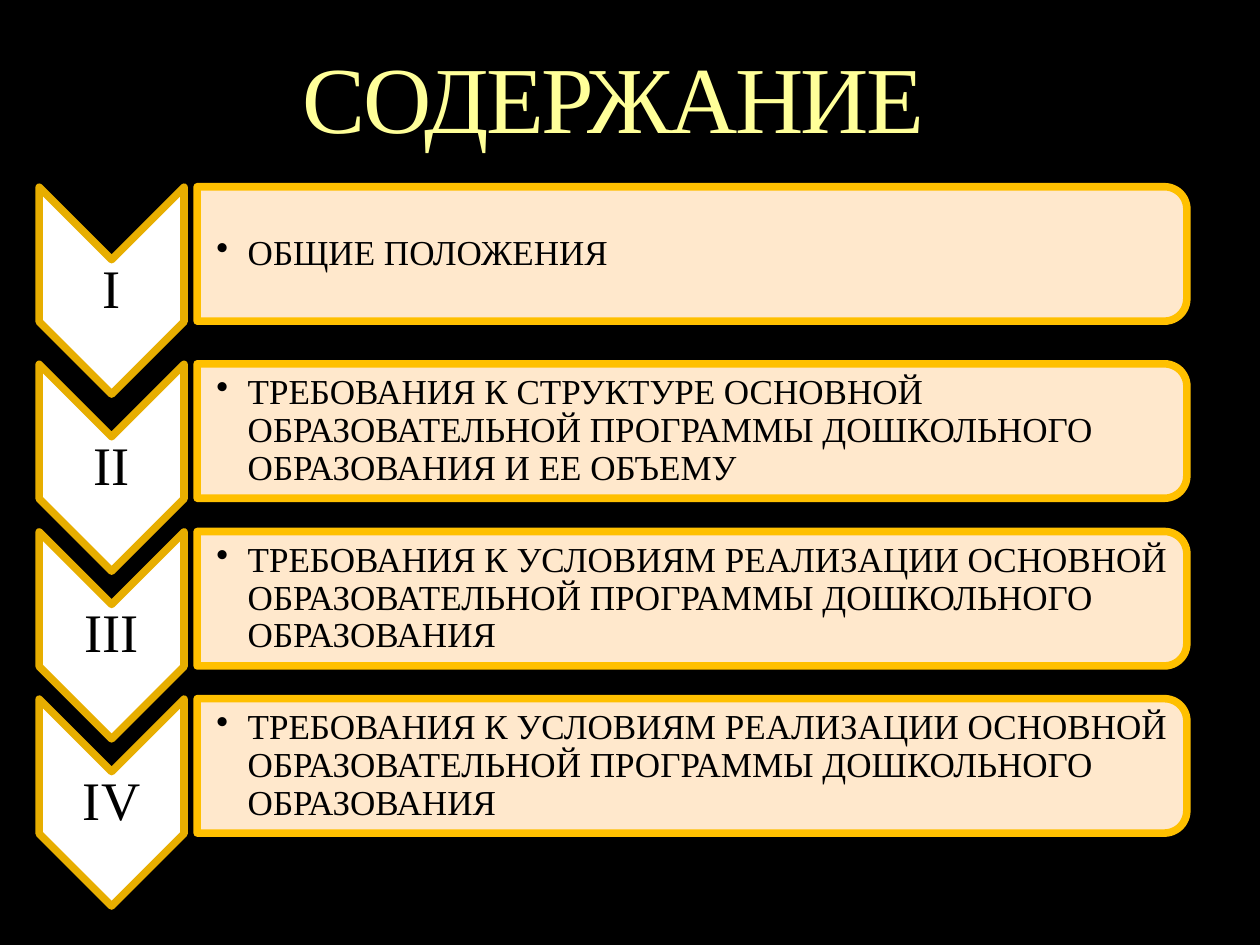
from dataclasses import dataclass

from lxml.etree import SubElement
from pptx import Presentation
from pptx.dml.color import RGBColor
from pptx.enum.shapes import MSO_SHAPE as Preset
from pptx.enum.text import MSO_ANCHOR as Anchor, MSO_AUTO_SIZE as AutoSize, PP_ALIGN as Align
from pptx.oxml.ns import qn
from pptx.util import Cm, Pt

FONT = "Times New Roman"
BLACK, WHITE, YELLOW = "000000", "FFFFFF", "FFFF99"
PEACH, GOLD, DARK_GOLD = "FFE8CC", "FFC000", "E7AE00"
CHEVRON_CENTER, CHEVRON_DROP = 2.25, 0.74
PANEL_CENTER = 13.95


@dataclass(frozen=True)
class Section:
    numeral: str
    heading: str
    center: float


SECTIONS = [
    Section("I", "ОБЩИЕ ПОЛОЖЕНИЯ", 5.12),
    Section("II", "ТРЕБОВАНИЯ К СТРУКТУРЕ ОСНОВНОЙ ОБРАЗОВАТЕЛЬНОЙ "
            "ПРОГРАММЫ ДОШКОЛЬНОГО ОБРАЗОВАНИЯ И ЕЕ ОБЪЕМУ", 8.69),
    Section("III", "ТРЕБОВАНИЯ К УСЛОВИЯМ РЕАЛИЗАЦИИ ОСНОВНОЙ "
            "ОБРАЗОВАТЕЛЬНОЙ ПРОГРАММЫ ДОШКОЛЬНОГО ОБРАЗОВАНИЯ", 12.07),
    Section("IV", "ТРЕБОВАНИЯ К УСЛОВИЯМ РЕАЛИЗАЦИИ ОСНОВНОЙ "
            "ОБРАЗОВАТЕЛЬНОЙ ПРОГРАММЫ ДОШКОЛЬНОГО ОБРАЗОВАНИЯ", 15.44),
]


def color(value: str) -> RGBColor:
    return RGBColor.from_string(value)


def centered(x: float, y: float, width: float, height: float) -> tuple:
    return Cm(x - width / 2), Cm(y - height / 2), Cm(width), Cm(height)


def write(shape, text: str, *, size: float, fill: str = BLACK, align=Align.CENTER,
          insets: tuple = (0, 0, 0, 0), bullet: bool = False, spacing: int = 0) -> None:
    frame = shape.text_frame
    frame.word_wrap = True
    frame.auto_size = AutoSize.NONE
    frame.vertical_anchor = Anchor.MIDDLE
    (frame.margin_left, frame.margin_top,
     frame.margin_right, frame.margin_bottom) = map(Cm, insets)
    paragraph = frame.paragraphs[0]
    paragraph.alignment = align
    paragraph.line_spacing = 0.9
    paragraph.space_before = Pt(0)
    if bullet:
        paragraph.level = 1
        properties = paragraph._p.get_or_add_pPr()
        properties.set("marL", str(Cm(0.63)))
        properties.set("indent", str(-Cm(0.63)))
        SubElement(properties, qn("a:buChar"), char="•")
    run = paragraph.add_run()
    run.text = text
    run.font.name = FONT
    run.font.size = Pt(size)
    run.font.color.rgb = color(fill)
    if spacing:
        run.font._element.set("spc", str(spacing))


def add_rotated_shape(slide, preset, bounds: tuple, fill: str, line: str) -> None:
    shape = slide.shapes.add_shape(preset, *bounds)
    shape.rotation = 90
    shape.shadow.inherit = False
    shape.fill.solid()
    shape.fill.fore_color.rgb = color(fill)
    shape.line.color.rgb = color(line)
    shape.line.width = Pt(4.33)


def add_section(slide, section: Section) -> None:
    chevron_y = section.center + CHEVRON_DROP
    add_rotated_shape(slide, Preset.ROUND_2_SAME_RECTANGLE,
                      centered(PANEL_CENTER, section.center, 2.71, 19.95), PEACH, GOLD)
    heading = slide.shapes.add_textbox(*centered(13.87, section.center, 19.81, 2.45))
    write(heading, section.heading, size=20, align=Align.LEFT,
          insets=(0.4, 0.03, 0.03, 0.03), bullet=True)
    add_rotated_shape(slide, Preset.CHEVRON,
                      centered(CHEVRON_CENTER, chevron_y, 4.17, 2.92), WHITE, DARK_GOLD)
    numeral = slide.shapes.add_textbox(*centered(CHEVRON_CENTER, chevron_y, 2.92, 1.25))
    write(numeral, section.numeral, size=31, insets=(0.05,) * 4)


def main() -> None:
    presentation = Presentation()
    presentation.slide_width, presentation.slide_height = Cm(25.4), Cm(19.05)
    slide = presentation.slides.add_slide(presentation.slide_layouts[0])
    slide.background.fill.solid()
    slide.background.fill.fore_color.rgb = color(BLACK)
    subtitle = slide.placeholders[1]._element
    subtitle.getparent().remove(subtitle)

    title = slide.shapes.title
    title.left, title.top, title.width, title.height = Cm(2.59), Cm(0.58), Cm(19.56), Cm(2.97)
    write(title, "СОДЕРЖАНИЕ", size=54, fill=YELLOW, spacing=-150)

    for section in SECTIONS:
        add_section(slide, section)
    presentation.save("out.pptx")


if __name__ == "__main__":
    main()
